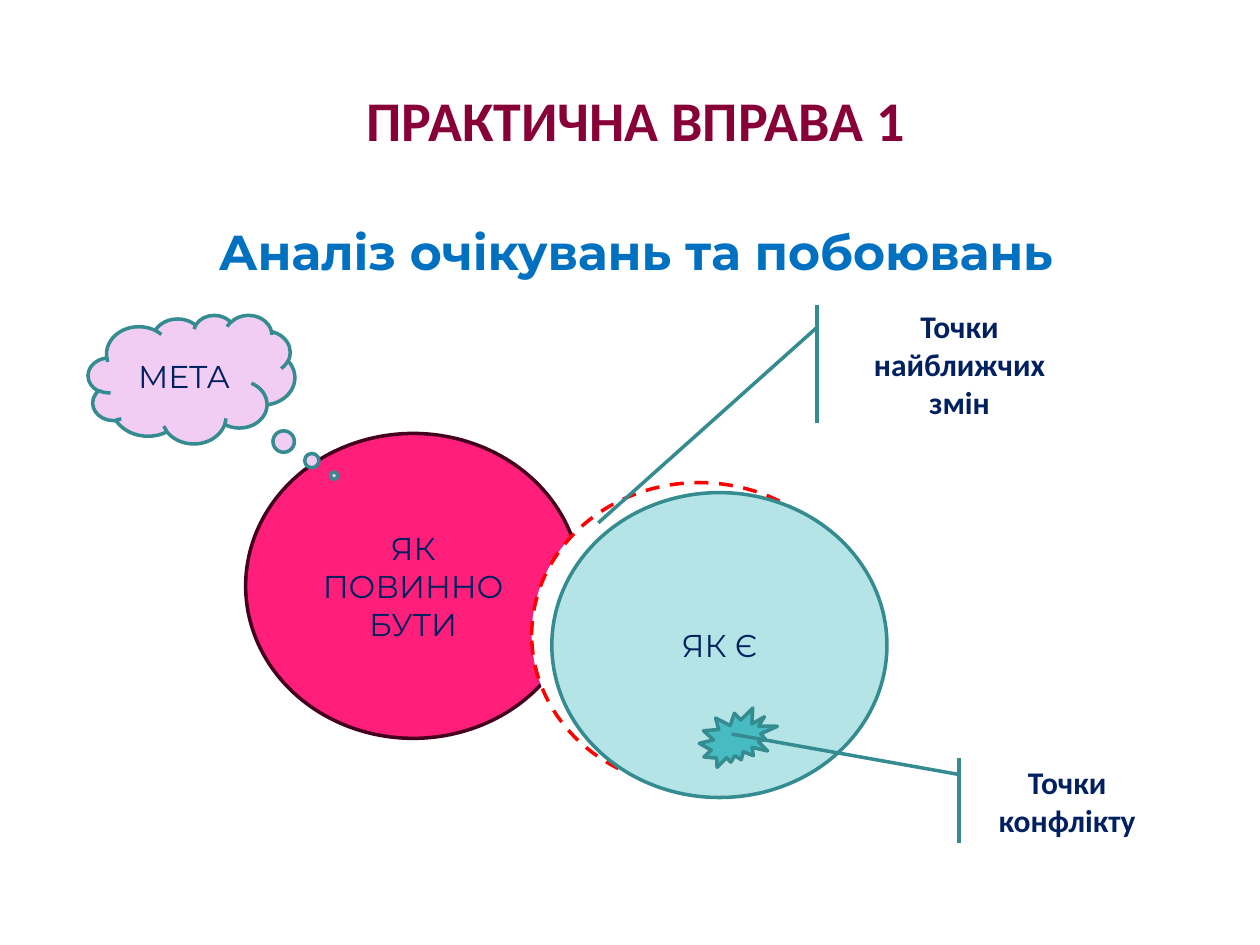
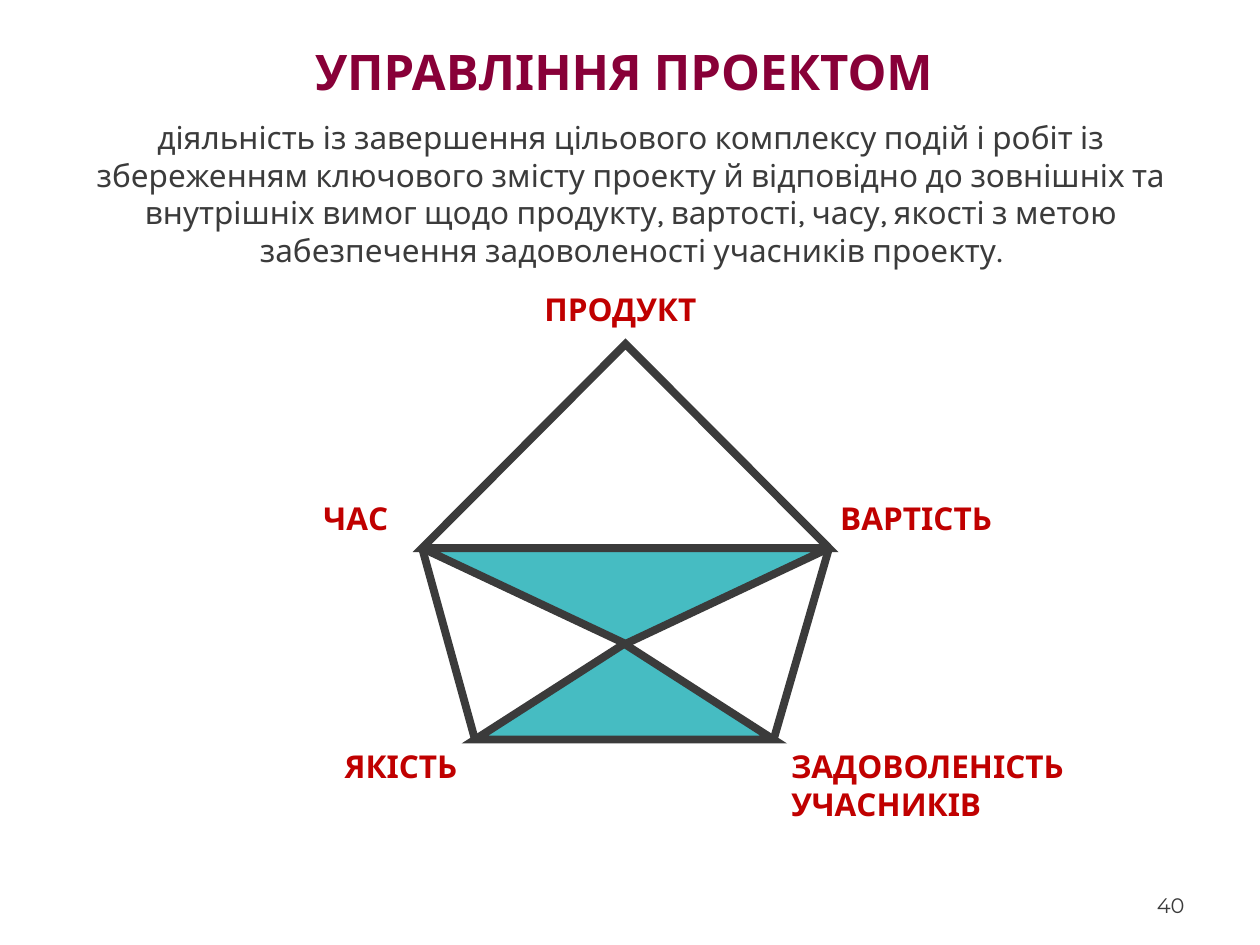
from lxml import etree
from pptx import Presentation
from pptx.dml.color import RGBColor
from pptx.enum.dml import MSO_LINE
from pptx.enum.shapes import MSO_CONNECTOR, MSO_SHAPE
from pptx.enum.text import MSO_ANCHOR, PP_ALIGN
from pptx.oxml.ns import qn
from pptx.util import Inches, Pt

CIRCLE = MSO_SHAPE.FLOWCHART_CONNECTOR
CLOUD = MSO_SHAPE.CLOUD_CALLOUT
BURST = MSO_SHAPE.EXPLOSION2
CALLOUT = MSO_SHAPE.LINE_CALLOUT_1_ACCENT_BAR
TRIANGLE = MSO_SHAPE.ISOSCELES_TRIANGLE
STRAIGHT = MSO_CONNECTOR.STRAIGHT
DASH = MSO_LINE.DASH
LEFT, CENTER, RIGHT = PP_ALIGN.LEFT, PP_ALIGN.CENTER, PP_ALIGN.RIGHT
TOP, MIDDLE, BOTTOM = MSO_ANCHOR.TOP, MSO_ANCHOR.MIDDLE, MSO_ANCHOR.BOTTOM

COLORS = {
    "title": "880038", "subtitle": "0070C0", "navy": "002060", "dark": "3B3B3B",
    "label": "C00000", "white": "FFFFFF", "red": "FF0000", "pink": "FF1F7B",
    "wine": "44001C", "lilac": "F2CDF3", "pale": "B5E4E7", "teal": "46BCC2",
    "deep_teal": "348B90",
}


def write(shape, text, font, size, color, bold=False, align=CENTER, anchor=MIDDLE):
    """Add one paragraph to a shape or text box."""
    frame = shape.text_frame
    frame.word_wrap = True
    frame.vertical_anchor = anchor
    paragraph = frame.add_paragraph() if frame.text else frame.paragraphs[0]
    paragraph.alignment = align
    run = paragraph.add_run()
    run.text = text
    run.font.name, run.font.size, run.font.bold = font, Pt(size), bold
    run.font.color.rgb = RGBColor.from_string(COLORS[color])
    return paragraph


def draw(slide, kind, box, fill, line, width=2, adjust=()):
    """Add a preset shape; no fill when fill is None."""
    shape = slide.shapes.add_shape(kind, *map(Inches, box))
    shape.shadow.inherit = False
    if fill:
        shape.fill.solid()
        shape.fill.fore_color.rgb = RGBColor.from_string(COLORS[fill])
    else:
        shape.fill.background()
    shape.line.color.rgb = RGBColor.from_string(COLORS[line])
    shape.line.width = Pt(width)
    for index, value in enumerate(adjust):
        shape.adjustments[index] = value
    return shape


prs = Presentation()
prs.slide_width, prs.slide_height = Inches(10), Inches(7.5)
blank = prs.slide_layouts[6]

# Slide 1: expectations and fears
exercise = prs.slides.add_slide(blank)

# Overlapping circles: desired state, zone of change, current state
CIRCLE_SIZE = (2.66, 2.42)
desired = draw(exercise, CIRCLE, (1.95, 3.44, *CIRCLE_SIZE), "pink", "wine")
write(desired, "ЯК ПОВИННО БУТИ", "Montserrat", 18, "navy")
change_zone = draw(exercise, CIRCLE, (4.22, 3.83, *CIRCLE_SIZE), "white", "red")
change_zone.line.dash_style = DASH
current = draw(exercise, CIRCLE, (4.38, 3.91, *CIRCLE_SIZE), "pale", "deep_teal")
write(current, "ЯК Є", "Montserrat", 18, "navy")

# Heading
heading = exercise.shapes.add_textbox(Inches(1.09), Inches(1.02), Inches(7.91), Inches(0.86))
write(heading, "ПРАКТИЧНА ВПРАВА 1", "Calibri", 32, "title", True)
subtitle = write(heading, "Аналіз очікувань та побоювань", "Montserrat", 28, "subtitle", True)
subtitle.space_before = Pt(39)

# Goal and conflict marks
goal = draw(exercise, CLOUD, (0.7, 2.5, 1.64, 1.02), "lilac", "deep_teal", adjust=(0.69, 0.75))
write(goal, "МЕТА", "Montserrat", 18, "navy")
draw(exercise, BURST, (5.55, 5.62, 0.62, 0.47), "teal", "deep_teal")

# Callouts
for text, box, pointer in [
    ("Точки конфлікту", (7.73, 6.02, 1.48, 0.67), (0.19, -0.08, -0.29, -1.3)),
    ("Точки найближчих змін", (6.64, 2.42, 1.95, 0.94), (0.19, -0.08, 1.84, -0.97)),
]:
    callout = draw(exercise, CALLOUT, box, "white", "deep_teal", adjust=pointer)
    write(callout, text, "Calibri", 18, "navy", True)

# Slide 2: project management
management = prs.slides.add_slide(blank)

# Pentagon: triangles stacked between three levels, then its lower sides
LEFT_X, RIGHT_X, BASE_LEFT, BASE_RIGHT = 3.35, 6.58, 3.77, 6.14
APEX_Y, MIDDLE_Y, CROSS_Y, BASE_Y = 2.73, 4.35, 5.11, 5.87
for x1, x2, y1, y2, fill, rotation in [
    (LEFT_X, RIGHT_X, APEX_Y, MIDDLE_Y, None, 0),
    (LEFT_X, RIGHT_X, MIDDLE_Y, CROSS_Y, "teal", 180),
    (BASE_LEFT, BASE_RIGHT, CROSS_Y, BASE_Y, "teal", 0),
]:
    triangle = draw(management, TRIANGLE, (x1, y1, x2 - x1, y2 - y1), fill, "dark", 4.5)
    triangle.rotation = rotation
    outline = triangle.line._get_or_add_ln()
    etree.SubElement(outline, qn("a:miter")).set("lim", "800000")

for top_x, base_x in [(LEFT_X, BASE_LEFT), (RIGHT_X, BASE_RIGHT)]:
    side = management.shapes.add_connector(
        STRAIGHT, Inches(top_x), Inches(MIDDLE_Y), Inches(base_x), Inches(BASE_Y))
    side.line.color.rgb = RGBColor.from_string(COLORS["dark"])
    side.line.width = Pt(4.5)
    etree.SubElement(side._element.spPr, qn("a:effectLst"))

# Title, definition, corner labels and page number
definition = (
    "діяльність із завершення цільового комплексу подій і робіт із збереженням "
    "ключового змісту проекту й відповідно до зовнішніх та внутрішніх вимог щодо "
    "продукту, вартості, часу, якості з метою забезпечення задоволеності учасників проекту."
)
label_style = ("Karla", 18, "label", True)
for text, box, style, align, anchor in [
    ("УПРАВЛІННЯ ПРОЕКТОМ", (2.4, 0.28, 5.41, 0.57), ("Karla", 28, "title", True), LEFT, TOP),
    (definition, (0.51, 0.91, 9, 1.25), ("Karla", 18, "dark"), CENTER, MIDDLE),
    ("ПРОДУКТ", (4.06, 2.25, 1.73, 0.4), label_style, CENTER, TOP),
    ("ЧАС", (2.24, 3.91, 0.94, 0.4), label_style, RIGHT, TOP),
    ("ВАРТІСТЬ", (6.57, 3.91, 2.05, 0.4), label_style, LEFT, TOP),
    ("ЯКІСТЬ", (2.16, 5.88, 1.57, 0.4), label_style, RIGHT, TOP),
    ("ЗАДОВОЛЕНІСТЬ УЧАСНИКІВ", (6.18, 5.88, 3.23, 0.7), label_style, LEFT, TOP),
    ("40", (7.17, 6.83, 2.33, 0.5), ("Montserrat", 12, "dark"), RIGHT, BOTTOM),
]:
    caption = management.shapes.add_textbox(*map(Inches, box))
    write(caption, text, *style, align=align, anchor=anchor)

prs.save("out.pptx")
